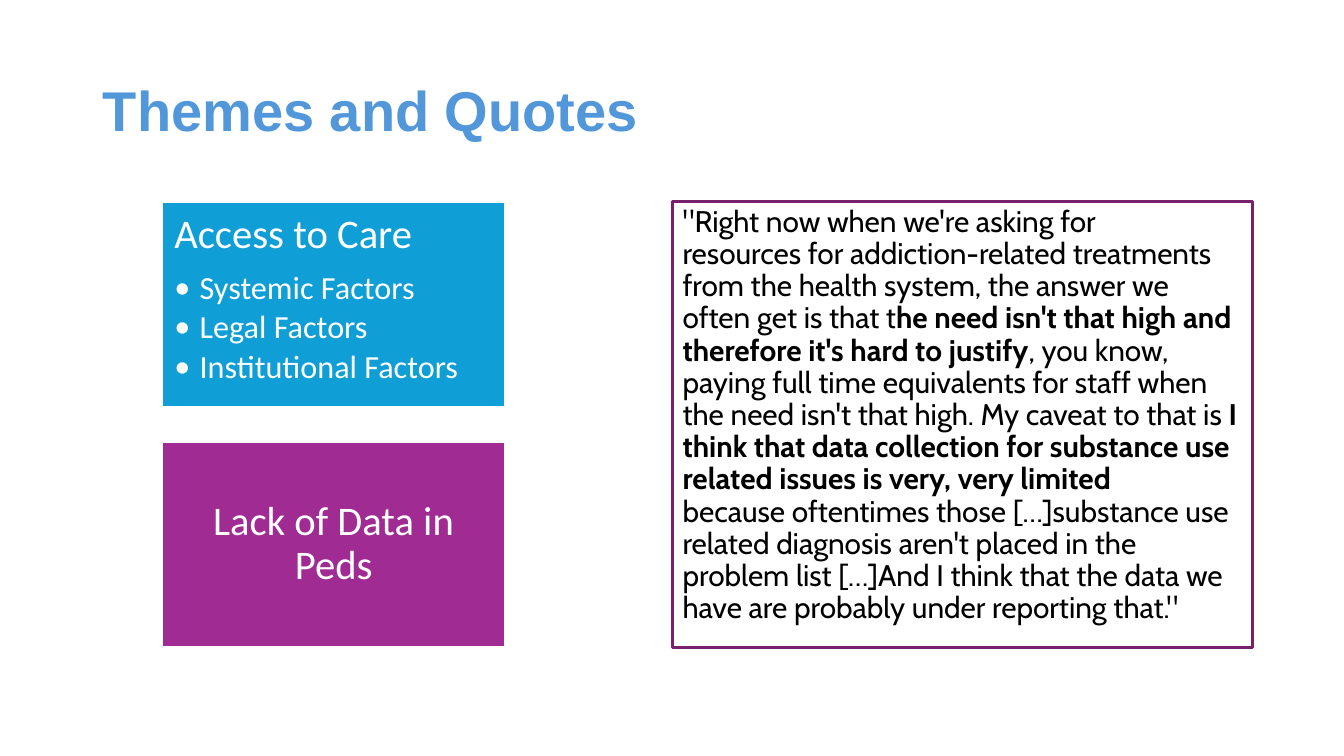
from pptx import Presentation, util as u
from pptx.dml.color import RGBColor
from pptx.enum import shapes, text
from lxml import etree

TITLE_BLUE = RGBColor(0x51, 0x97, 0xDA)
CARD_BLUE = RGBColor(0x0F, 0x9E, 0xD5)
CARD_PURPLE = RGBColor(0xA0, 0x2B, 0x93)
QUOTE_BORDER = RGBColor(0x78, 0x20, 0x6E)
WHITE = RGBColor(0xFF, 0xFF, 0xFF)
BLACK = RGBColor(0, 0, 0)

TITLE_FONT = dict(name="Arial", size=u.Pt(40), bold=True)
HEADING_FONT = dict(name="Calibri", size=u.Pt(29))
FACTOR_FONT = dict(name="Calibri", size=u.Pt(23))
QUOTE_FONT = dict(name="Cabin", size=u.Pt(21.3))

CARDS = [
    (CARD_BLUE, "Access to Care",
     ["Systemic Factors", "Legal Factors", "Institutional Factors"]),
    (CARD_PURPLE, "Lack of Data in Peds", []),
]
HARD_SPACE_MARK, HARD_SPACE = "~", chr(160)
QUOTE = [
    ("\"Right~now~when we're asking for resources~for addiction-related treatments "
     "from the~health system, the answer we often get is~that t", False),
    ("he need isn't that high and therefore~it's hard to justify", True),
    (", you know, paying full~time equivalents for staff when the need~isn't that high. "
     "My caveat to that is", False),
    (" I think~that data collection for substance use related~issues is very, "
     "very limited ", True),
    ("because~oftentimes~those […]substance use related~diagnosis aren't placed in the "
     "problem list […]And I think that the data we have~are probably under reporting "
     "that.\"", False),
]


def apply(target, values):
    for name, value in values.items():
        setattr(target, name, value)


def place(shape, box):
    names = ("left", "top", "width", "height")
    apply(shape, {name: u.Inches(size) for name, size in zip(names, box)})


def add_span(para, words, font, color):
    span = para.add_run()
    span.text = words
    apply(span.font, font)
    span.font.color.rgb = color


def set_bullet(para, char=None, indent=0):
    props = para._p.get_or_add_pPr()
    props.set("marL", str(u.Inches(indent)))
    props.set("indent", str(-u.Inches(indent)))
    drawing = "{http://schemas.openxmlformats.org/drawingml/2006/main}"
    if char:
        etree.SubElement(props, drawing + "buFont").set("typeface", FACTOR_FONT["name"])
        etree.SubElement(props, drawing + "buChar").set("char", char)
    else:
        etree.SubElement(props, drawing + "buNone")


def fill_title(title, box):
    place(title, box)
    apply(title.text_frame, dict(vertical_anchor=text.MSO_ANCHOR.MIDDLE,
                                 auto_size=text.MSO_AUTO_SIZE.NONE))
    para = title.text_frame.paragraphs[0]
    apply(para, dict(alignment=text.PP_ALIGN.LEFT, line_spacing=0.9))
    add_span(para, "Themes and Quotes", TITLE_FONT, TITLE_BLUE)


def add_card(page, box, color, heading, factors):
    left, top, width, height = map(u.Inches, box)
    card = page.shapes.add_shape(shapes.MSO_SHAPE.RECTANGLE, left, top, width, height)
    card.shadow.inherit = False
    card.fill.solid()
    card.fill.fore_color.rgb = color
    card.line.color.rgb = WHITE
    card.line.width = u.Pt(1.5)
    frame = card.text_frame
    margins = ("margin_left", "margin_top", "margin_right", "margin_bottom")
    apply(frame, dict.fromkeys(margins, u.Inches(0.12)))
    apply(frame, dict(word_wrap=True, vertical_anchor=text.MSO_ANCHOR.TOP if factors
                      else text.MSO_ANCHOR.MIDDLE))
    para = frame.paragraphs[0]
    apply(para, dict(line_spacing=0.9, space_after=u.Pt(10),
                     alignment=text.PP_ALIGN.LEFT if factors else text.PP_ALIGN.CENTER))
    add_span(para, heading, HEADING_FONT, WHITE)
    for factor in factors:
        para = frame.add_paragraph()
        apply(para, dict(level=1, line_spacing=0.9, space_after=u.Pt(3.5),
                         alignment=text.PP_ALIGN.LEFT))
        set_bullet(para, "•", 0.25)
        add_span(para, factor, FACTOR_FONT, WHITE)


def add_cards(page, box):
    left, top, width, height = box
    card_height = height * 6 / 13
    step = height - card_height
    for row, card in enumerate(CARDS):
        add_card(page, (left, top + row * step, width, card_height), *card)


def fill_quote(body, box):
    place(body, box)
    body.line.color.rgb = QUOTE_BORDER
    body.line.width = u.Pt(2.25)
    apply(body.text_frame, dict(word_wrap=True, auto_size=text.MSO_AUTO_SIZE.NONE,
                                vertical_anchor=text.MSO_ANCHOR.TOP))
    para = body.text_frame.paragraphs[0]
    apply(para, dict(line_spacing=0.9, space_before=u.Pt(10),
                     alignment=text.PP_ALIGN.LEFT))
    set_bullet(para)
    for words, bold in QUOTE:
        add_span(para, words.replace(HARD_SPACE_MARK, HARD_SPACE),
                 dict(QUOTE_FONT, bold=bold), BLACK)


def main():
    deck = Presentation()
    deck.slide_width, deck.slide_height = u.Inches(13.33), u.Inches(7.5)
    page = deck.slides.add_slide(deck.slide_layouts[1])
    fill_title(page.shapes.title, (0.92, 0.4, 11.5, 1.45))
    add_cards(page, (1.61, 2, 3.4, 4.42))
    fill_quote(page.placeholders[1], (6.67, 2, 5.75, 4.42))
    deck.save("out.pptx")


if __name__ == "__main__":
    main()
